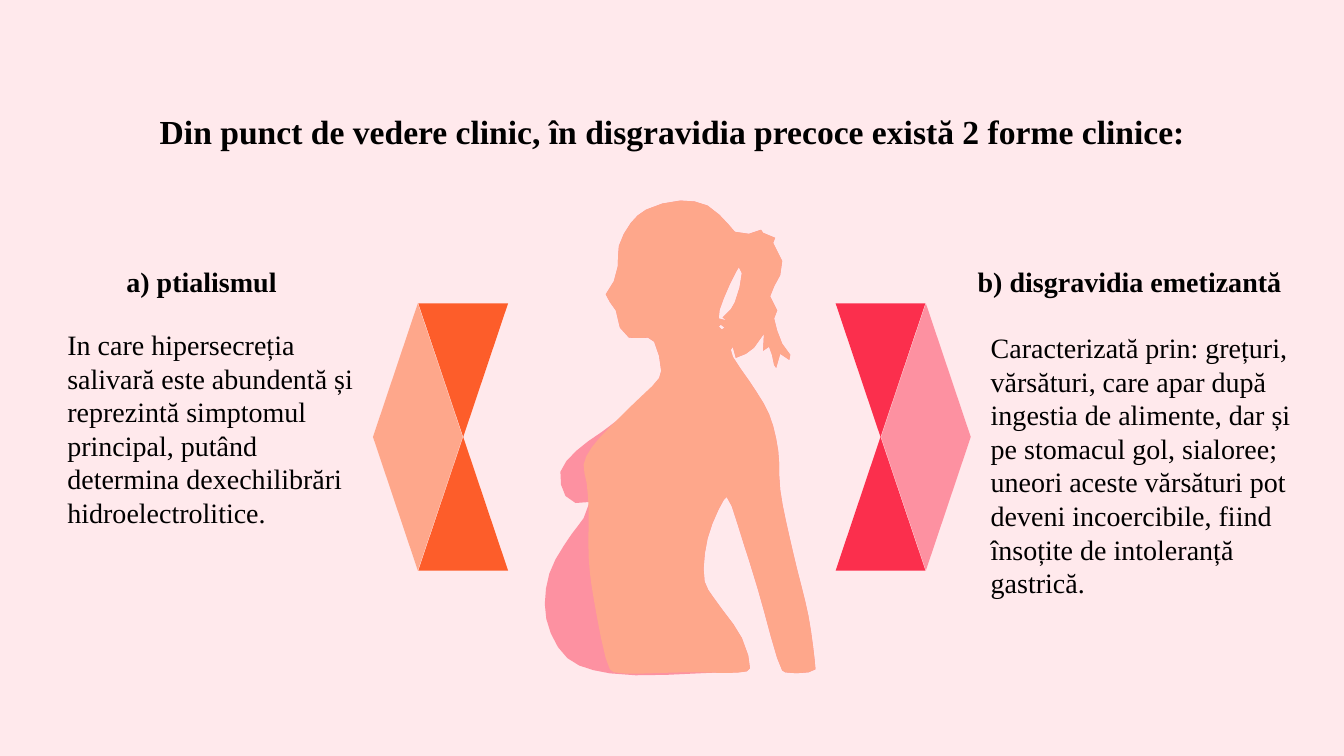
import math
from dataclasses import dataclass

import pptx
import pptx.dml.color
import pptx.enum.shapes
import pptx.enum.text
import pptx.util

RGBColor = pptx.dml.color.RGBColor
Preset = pptx.enum.shapes.MSO_SHAPE
Align = pptx.enum.text.PP_ALIGN
Anchor = pptx.enum.text.MSO_ANCHOR
AutoSize = pptx.enum.text.MSO_AUTO_SIZE

BLUSH = RGBColor(0xFF, 0xE9, 0xEC)
PEACH = RGBColor(0xFE, 0xA7, 0x8B)
ORANGE = RGBColor(0xFD, 0x5D, 0x2A)
PINK = RGBColor(0xFD, 0x91, 0xA1)
CRIMSON = RGBColor(0xFB, 0x2F, 0x4D)
BLACK = RGBColor(0, 0, 0)

COLUMNS, ROWS = 133.33, 75
CELL = pptx.util.Inches(0.1)
STEPS_PER_CELL = 10
SAMPLE_SPACING, MOST_SAMPLES = 18, 4

Point = tuple[float, float]


def grid(cells: float) -> int:
    return round(cells * CELL)


@dataclass
class Area:
    column: float
    row: float
    width: float
    height: float

    def emu(self) -> list[int]:
        return [grid(n) for n in (self.column, self.row, self.width, self.height)]


@dataclass
class Passage:
    area: Area
    words: str
    bold: bool = False
    align: Align = Align.LEFT


@dataclass
class Arrow:
    diamond_column: float
    triangle_shift: float
    light: RGBColor
    dark: RGBColor


TITLE = Passage(
    Area(3.4, 9.05, 126.6, 7.9),
    "Din punct de vedere clinic, în disgravidia precoce există 2 forme clinice:",
    True, Align.CENTER,
)
PASSAGES = [
    Passage(Area(7.3, 25.7, 25.4, 4.4), "a) ptialismul", True, Align.CENTER),
    Passage(Area(5.7, 32, 31.3, 26.3),
            "In care hipersecreția salivară este abundentă și reprezintă simptomul "
            "principal, putând determina dexechilibrări hidroelectrolitice."),
    Passage(Area(96, 25.7, 34.9, 4.4), "b) disgravidia emetizantă", True),
    Passage(Area(97.3, 32.3, 33.9, 33),
            "Caracterizată prin: grețuri, vărsături, care apar după ingestia de "
            "alimente, dar și pe stomacul gol, sialoree; uneori aceste vărsături pot "
            "deveni incoercibile, fiind însoțite de intoleranță gastrică."),
]
ARROWS = [Arrow(37, 4.5, PEACH, ORANGE), Arrow(87.4, -4.5, PINK, CRIMSON)]
ARROW_ROW, ARROW_WIDTH, ARROW_HEIGHT = 30.1, 8.9, 26.5

OUTER_ARM = [(808, 653), (802, 611), (787, 549), (774, 486), (772, 447), (763, 411),
             (744, 379), (727, 354), (725, 347), (727, 344), (730, 355)]
PONYTAIL = [(740, 351), (748, 345), (758, 331), (757, 348), (763, 344), (768, 362),
            (770, 365), (774, 351), (783, 357), (784, 352), (776, 341), (771, 328),
            (768, 316), (771, 308), (764, 294), (774, 273), (776, 259), (767, 241),
            (769, 236), (757, 231), (755, 228), (743, 232)]
HEAD = [(729, 230), (723, 223), (702, 204), (675, 199), (641, 208), (626, 221),
        (614, 244), (613, 264), (609, 279), (601, 292), (611, 308), (615, 325),
        (624, 335), (643, 335), (649, 339), (656, 368), (654, 375)]
TORSO = [(625, 404), (587, 444), (579, 461), (582, 479), (584, 504), (584, 553),
         (589, 594), (605, 664), (609, 667), (681, 667)]
BELLY = [(611, 418), (572, 447), (556, 468), (561, 492), (571, 499), (585, 498),
         (579, 514), (567, 530), (545, 569), (542, 614), (563, 653), (605, 668),
         (715, 667)]
INNER_ARM = [(741, 666), (744, 663), (736, 633), (708, 593), (699, 577), (702, 534),
             (718, 496), (721, 493), (738, 540), (752, 585), (776, 665),
             (779, 667), (802, 667), (809, 664)]
NAPE_GAP = [(716, 327), (713, 324), (715, 322), (719, 325)]
HAIR_GAP = [(717, 315), (721, 318), (713, 316), (718, 296), (730, 270),
            (733, 265), (736, 271), (729, 300), (725, 307)]


def blend(a: Point, b: Point, start: float, end: float, at: float) -> Point:
    share = (at - start) / (end - start)
    return a[0] + (b[0] - a[0]) * share, a[1] + (b[1] - a[1]) * share


def smooth(anchors: list[Point]) -> list[Point]:
    curve = []
    for i in range(len(anchors)):
        near = [anchors[(i + k) % len(anchors)] for k in (-1, 0, 1, 2)]
        knots = [0.0]
        for a, b in zip(near, near[1:]):
            knots.append(knots[-1] + math.sqrt(math.dist(a, b)))
        samples = min(MOST_SAMPLES, 1 + int(math.dist(near[1], near[2]) / SAMPLE_SPACING))
        for sample in range(samples):
            at = knots[1] + (knots[2] - knots[1]) * sample / samples
            level = near
            for pairs in (((0, 1), (1, 2), (2, 3)), ((0, 2), (1, 3)), ((1, 2),)):
                level = [blend(level[n], level[n + 1], knots[a], knots[b], at)
                         for n, (a, b) in enumerate(pairs)]
            curve.append(level[0])
    return [(grid(x / STEPS_PER_CELL), grid(y / STEPS_PER_CELL)) for x, y in curve]


def paint(shape, color: RGBColor) -> None:
    shape.shadow.inherit = False
    shape.fill.solid()
    shape.fill.fore_color.rgb = color
    shape.line.fill.background()


def draw_silhouette(shapes, front: list[Point], color: RGBColor) -> None:
    body = OUTER_ARM + PONYTAIL + HEAD + front + INNER_ARM
    outline, *gaps = [smooth(part) for part in (body, NAPE_GAP, HAIR_GAP)]
    builder = shapes.build_freeform(*outline[0])
    builder.add_line_segments(outline[1:])
    for gap in gaps:
        builder.move_to(*gap[0])
        builder.add_line_segments(gap[1:])
    paint(builder.convert_to_shape(), color)


def draw_arrow(shapes, arrow: Arrow) -> None:
    half = ARROW_HEIGHT / 2
    column = arrow.diamond_column + arrow.triangle_shift
    parts = [
        (Preset.DIAMOND, arrow.diamond_column, ARROW_ROW, ARROW_HEIGHT, 0, arrow.light),
        (Preset.ISOSCELES_TRIANGLE, column, ARROW_ROW, half, 180, arrow.dark),
        (Preset.ISOSCELES_TRIANGLE, column, ARROW_ROW + half, half, 0, arrow.dark),
    ]
    group = shapes.add_group_shape()
    for preset, left, top, height, turn, color in parts:
        part = group.shapes.add_shape(preset, *Area(left, top, ARROW_WIDTH, height).emu())
        part.rotation = turn
        paint(part, color)


def write(holder, passage: Passage, size: int, anchor: Anchor) -> None:
    frame = holder.text_frame
    frame.text = passage.words
    paragraph = frame.paragraphs[0]
    paragraph.alignment = passage.align
    frame_format = {"word_wrap": True, "auto_size": AutoSize.NONE,
                    "vertical_anchor": anchor}
    font_format = {"name": "Times New Roman", "size": pptx.util.Pt(size),
                   "bold": passage.bold}
    font = paragraph.runs[0].font
    for target, values in ((frame, frame_format), (font, font_format)):
        for attribute, value in values.items():
            setattr(target, attribute, value)
    font.color.rgb = BLACK


def main() -> None:
    deck = pptx.Presentation()
    deck.slide_width, deck.slide_height = grid(COLUMNS), grid(ROWS)
    slide = deck.slides.add_slide(deck.slide_layouts[5])
    slide.background.fill.solid()
    slide.background.fill.fore_color.rgb = BLUSH
    heading = slide.shapes.title
    for side, length in zip(("left", "top", "width", "height"), TITLE.area.emu()):
        setattr(heading, side, length)
    write(heading, TITLE, 24, Anchor.MIDDLE)
    for arrow in ARROWS:
        draw_arrow(slide.shapes, arrow)
    for passage in PASSAGES:
        write(slide.shapes.add_textbox(*passage.area.emu()), passage, 20, Anchor.TOP)
    draw_silhouette(slide.shapes, BELLY, PINK)
    draw_silhouette(slide.shapes, TORSO, PEACH)
    deck.save("out.pptx")


if __name__ == "__main__":
    main()
